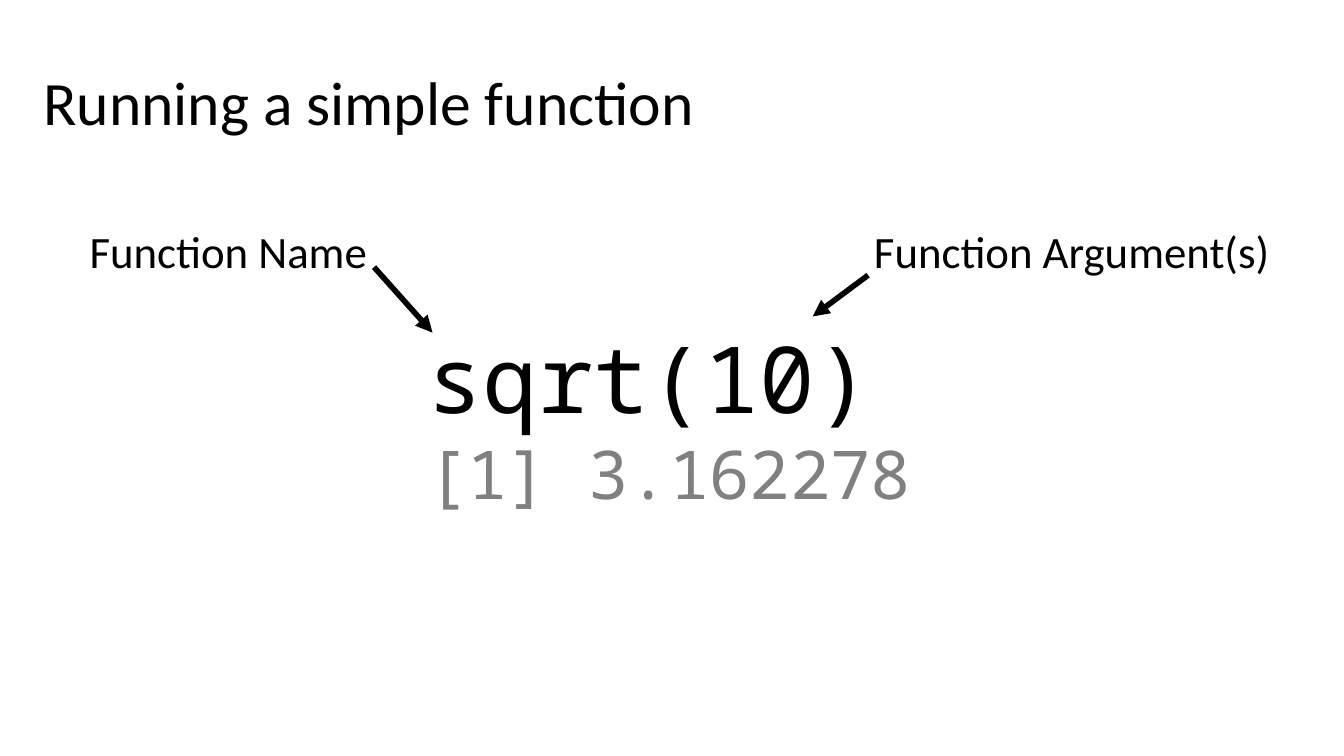
from lxml import etree
from pptx import Presentation
from pptx.dml.color import RGBColor
from pptx.enum import shapes, text
from pptx.oxml.ns import qn
from pptx.util import Inches, Pt

BLACK = RGBColor(0x00, 0x00, 0x00)
GRAY = RGBColor(0x80, 0x80, 0x80)
WHITE = RGBColor(0xFF, 0xFF, 0xFF)
BODY_FONT = "Calibri"
CODE_FONT = "Noto Sans Mono"


class FunctionSlide:
    """Holds the current slide and draws its elements in one style."""

    def __init__(self, prs):
        self.slide = prs.slides.add_slide(prs.slide_layouts[5])
        fill = self.slide.background.fill
        fill.solid()
        fill.fore_color.rgb = WHITE

    def set_words(self, paragraph, words, size, font=BODY_FONT, color=BLACK):
        paragraph.text = words
        for run in paragraph.runs:
            run.font.size = Pt(size)
            run.font.name = font
            run.font.color.rgb = color

    def title(self, words, box):
        title = self.slide.shapes.title
        title.left, title.top, title.width, title.height = map(Inches, box)
        frame = title.text_frame
        frame.vertical_anchor = text.MSO_ANCHOR.MIDDLE
        heading = frame.paragraphs[0]
        heading.alignment = text.PP_ALIGN.LEFT
        heading.line_spacing = 0.9
        self.set_words(heading, words, 44)

    def text_frame(self, box, parent):
        frame = parent.shapes.add_textbox(*map(Inches, box)).text_frame
        frame.word_wrap = False
        frame.auto_size = text.MSO_AUTO_SIZE.SHAPE_TO_FIT_TEXT
        return frame

    def code(self, call, result, box):
        frame = self.text_frame(box, self.slide)
        self.set_words(frame.paragraphs[0], call, 66, CODE_FONT)
        self.set_words(frame.add_paragraph(), result, 48, CODE_FONT, GRAY)

    def arrow(self, start, end, parent):
        arrow = parent.shapes.add_connector(
            shapes.MSO_CONNECTOR.STRAIGHT, *map(Inches, start + end))
        arrow.line.color.rgb = BLACK
        arrow.line.width = Pt(4)
        properties = arrow.element.spPr
        line = properties.find(qn("a:ln"))
        etree.SubElement(line, qn("a:tailEnd"), type="triangle")
        etree.SubElement(properties, qn("a:effectLst"))

    def callout(self, words, box, start, end):
        """A label grouped with the arrow that leads from it to the code."""
        group = self.slide.shapes.add_group_shape()
        label = self.text_frame(box, group)
        self.set_words(label.paragraphs[0], words, 32)
        self.arrow(start, end, group)


def main():
    prs = Presentation()
    prs.slide_width, prs.slide_height = Inches(13.33), Inches(7.5)
    page = FunctionSlide(prs)

    # Heading
    page.title("Running a simple function", (0.33, 0.32, 11.5, 1.45))

    # Function call and its result
    page.code("sqrt(10)", "[1] 3.162278", (4.14, 3.14, 5.06, 2.02))

    # Parts of the call
    page.callout("Function Name", (0.79, 2.17, 2.99, 0.64),
                 (3.71, 2.65), (4.29, 3.3))
    page.callout("Function Argument(s)", (8.57, 2.17, 4.17, 0.64),
                 (8.61, 2.73), (8.06, 3.14))

    prs.save("out.pptx")


if __name__ == "__main__":
    main()
